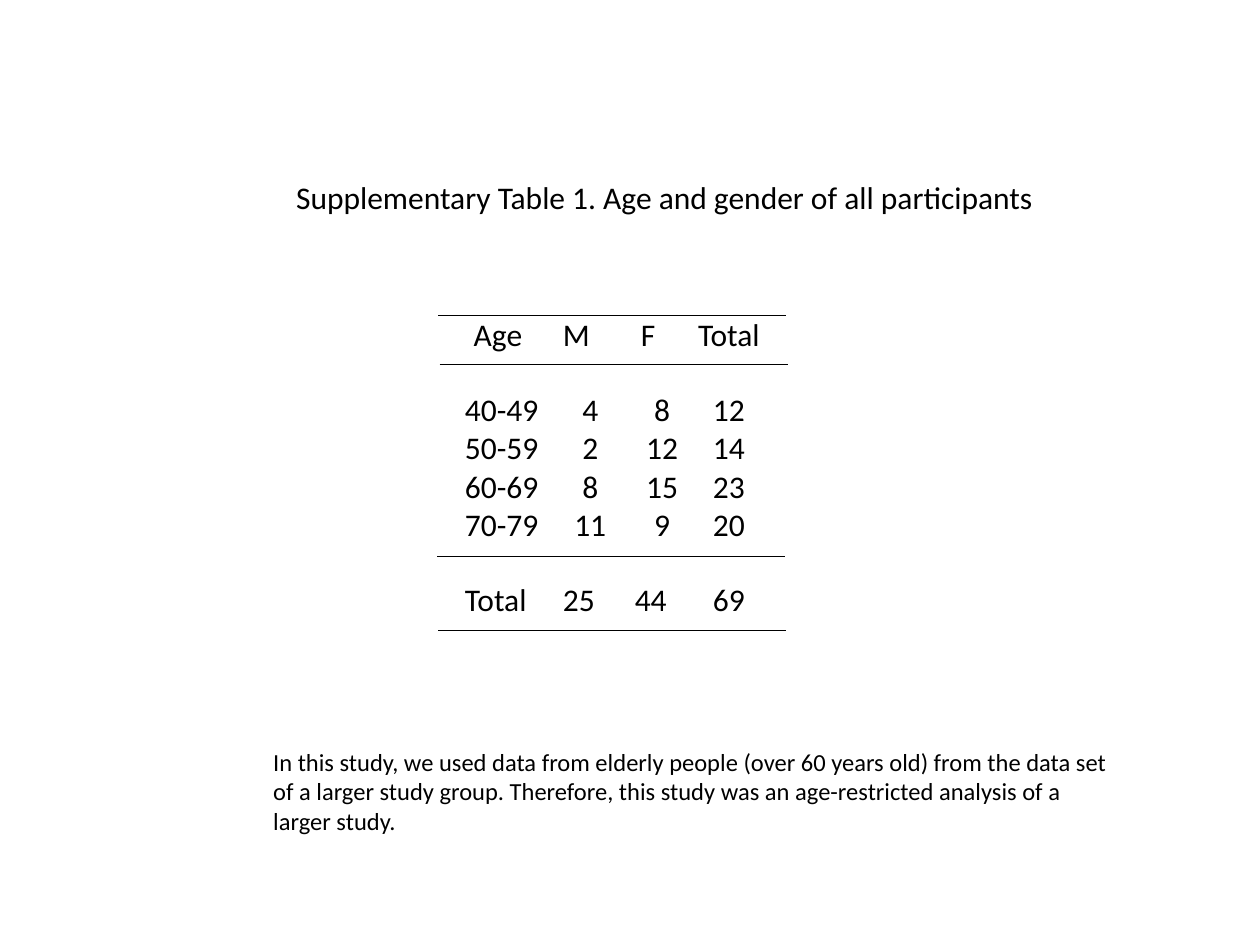
from dataclasses import dataclass

from lxml import etree
from pptx import Presentation
from pptx.dml.color import RGBColor
from pptx.enum import shapes as s
from pptx.enum import text as t
from pptx.oxml.ns import qn
from pptx.util import Inches, Pt

BLACK = "000000"
NO_STYLE = "{2D5ABB26-0587-4C30-8999-92F81FD0307C}"
LEFT, MID = t.PP_ALIGN.LEFT, t.PP_ALIGN.CENTER
TOP, LOW = t.MSO_ANCHOR.TOP, t.MSO_ANCHOR.BOTTOM


@dataclass
class Row:
    cells: tuple
    high: float
    anchor: t.MSO_ANCHOR = TOP
    head: float = 0
    foot: float = 0
    dent: float = 0.21  # left margin of the first cell
    shift: float = 0.04  # move of the M and F cells off the middle


@dataclass
class Rule:
    left: float
    top: float
    wide: float = 2.76


ROWS = [
    Row(("Age", "M", "F", "Total"), 0.39, head=0.02, dent=0.28, shift=-0.07),
    Row(("40-49", 4, 8, 12), 0.53, LOW),
    Row(("50-59", 2, 12, 14), 0.3),
    Row(("60-69", 8, 15, 23), 0.3),
    Row(("70-79", 11, 9, 20), 0.4),
    Row(("Total", 25, 44, 69), 0.58, LOW, foot=0.08, shift=-0.05),
]
WIDTHS = [0.88, 0.57, 0.57, 0.74]
RULES = [Rule(3.48, 2.5), Rule(3.49, 2.89), Rule(3.47, 4.42), Rule(3.48, 5)]


def color(code: str) -> RGBColor:
    return RGBColor.from_string(code)


def write(frame, words, size=18, align=LEFT, anchor=TOP) -> None:
    frame.word_wrap = True
    frame.vertical_anchor = anchor
    para = frame.paragraphs[0]
    para.text = str(words)
    para.alignment = align
    font = para.font
    font.name, font.size = "Calibri", Pt(size)
    font.color.rgb = color(BLACK)


def draw(slide, rule: Rule) -> None:
    line = slide.shapes.add_connector(
        s.MSO_CONNECTOR.STRAIGHT, Inches(rule.left), Inches(rule.top),
        Inches(rule.left + rule.wide), Inches(rule.top))
    line.line.color.rgb = color(BLACK)
    line.line.width = Pt(0.5)
    etree.SubElement(line._element.spPr, qn("a:effectLst"))


def fill(cell, words, row: Row, col: int) -> None:
    first, last = col == 0, col == len(WIDTHS) - 1
    move = 0 if first or last else 2 * row.shift
    cell.margin_left = Inches(row.dent if first else max(move, 0))
    cell.margin_right = Inches(0.17 if last else max(-move, 0))
    cell.margin_top, cell.margin_bottom = Inches(row.head), Inches(row.foot)
    write(cell.text_frame, words, align=LEFT if first else MID)
    cell.vertical_anchor = row.anchor
    cell.fill.background()


def tally(slide) -> None:
    """Add the table of ages and genders."""
    grid = slide.shapes.add_table(
        len(ROWS), len(WIDTHS), Inches(3.48), Inches(2.49),
        Inches(sum(WIDTHS)), Inches(sum(r.high for r in ROWS))).table
    grid.horz_banding = grid.first_row = False
    grid._tbl.tblPr.find(qn("a:tableStyleId")).text = NO_STYLE
    for col, wide in zip(grid.columns, WIDTHS):
        col.width = Inches(wide)
    for i, row in enumerate(ROWS):
        grid.rows[i].height = Inches(row.high)
        for j, words in enumerate(row.cells):
            fill(grid.cell(i, j), words, row, j)


def main() -> None:
    deck = Presentation()
    deck.slide_width, deck.slide_height = Inches(10), Inches(7.5)
    slide = deck.slides.add_slide(deck.slide_layouts[5])

    title = slide.shapes.title
    title.left, title.top = Inches(2.25), Inches(1.36)
    title.width, title.height = Inches(6.57), Inches(0.4)
    title.text_frame.auto_size = t.MSO_AUTO_SIZE.NONE
    write(title.text_frame,
          "Supplementary Table 1. Age and gender of all participants")

    tally(slide)
    for rule in RULES:
        draw(slide, rule)

    note = slide.shapes.add_textbox(
        Inches(2.07), Inches(5.88), Inches(6.93), Inches(0.81))
    write(note.text_frame,
          "In this study, we used data from elderly people (over 60 years "
          "old) from the data set of a larger study group. Therefore, this "
          "study was an age-restricted analysis of a larger study.", size=14)
    deck.save("out.pptx")


if __name__ == "__main__":
    main()
